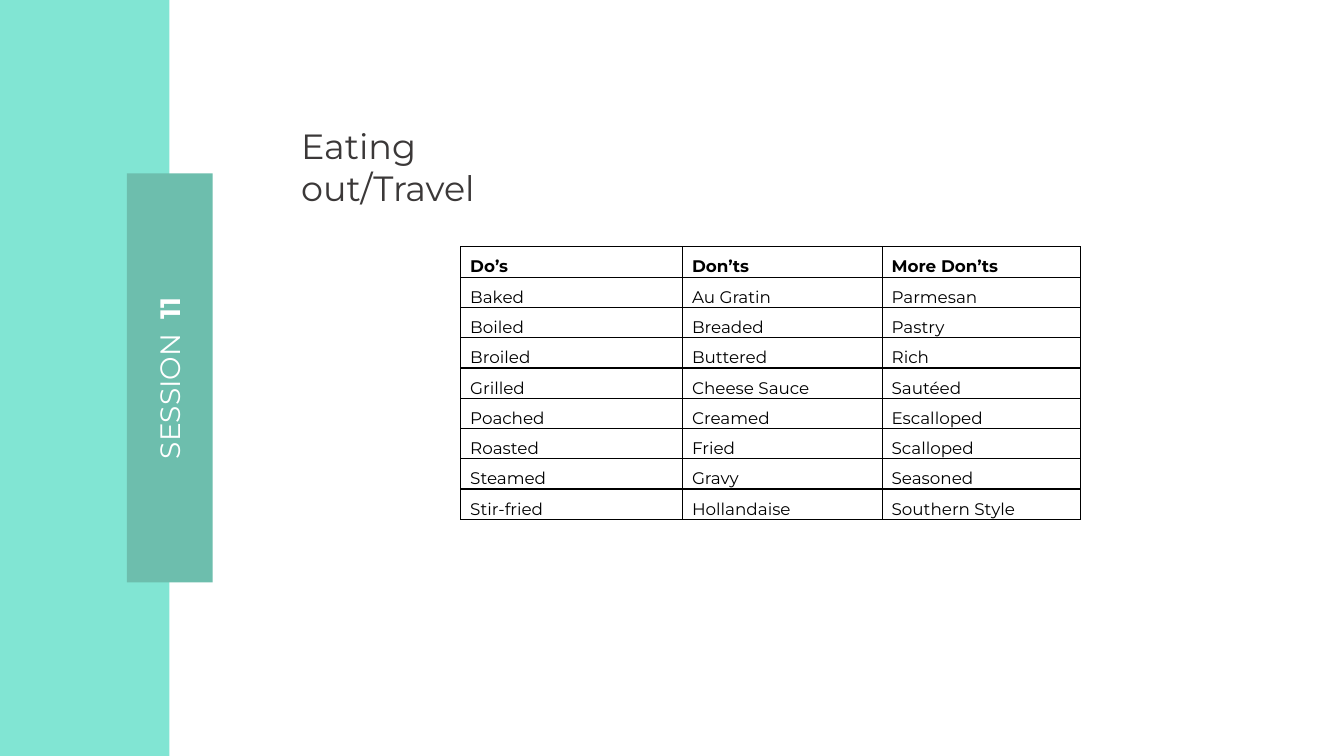
from lxml.etree import SubElement
from pptx import Presentation
from pptx.dml.color import RGBColor
from pptx.enum.shapes import MSO_SHAPE
from pptx.enum.text import MSO_ANCHOR, MSO_AUTO_SIZE, PP_ALIGN
from pptx.oxml.ns import qn
from pptx.util import Cm, Pt

MINT = RGBColor(0x81, 0xE5, 0xD3)
TEAL = RGBColor(0x6D, 0xBE, 0xAD)
WHITE = RGBColor(0xFF, 0xFF, 0xFF)
CHARCOAL = RGBColor(0x3B, 0x38, 0x38)
BLACK = RGBColor(0, 0, 0)
FONT = "Montserrat"

FOOD_CHOICES = [
    ("Do’s", "Don’ts", "More Don’ts"),
    ("Baked", "Au Gratin", "Parmesan"),
    ("Boiled", "Breaded", "Pastry"),
    ("Broiled", "Buttered", "Rich"),
    ("Grilled", "Cheese Sauce", "Sautéed"),
    ("Poached", "Creamed", "Escalloped"),
    ("Roasted", "Fried", "Scalloped"),
    ("Steamed", "Gravy", "Seasoned"),
    ("Stir-fried", "Hollandaise", "Southern Style"),
]
COLUMN_WIDTHS = (5.59, 5.03, 5)
ROW_HEIGHT = 0.73


def add_text(paragraph, text, size=12, color=BLACK, bold=False, spacing=0):
    """Append a run with its format; spacing is in points."""
    run = paragraph.add_run()
    run.text = text
    run.font.name = FONT
    run.font.size = Pt(size)
    run.font.bold = bold
    run.font.color.rgb = color
    if spacing:
        run.font._element.set("spc", str(round(spacing * 100)))


def add_panel(slide, left, top, width, height, color):
    """Draw a plain filled rectangle, with lengths in centimetres."""
    panel = slide.shapes.add_shape(
        MSO_SHAPE.RECTANGLE, Cm(left), Cm(top), Cm(width), Cm(height))
    panel.shadow.inherit = False
    panel.fill.solid()
    panel.fill.fore_color.rgb = color
    panel.line.fill.background()


def add_label(slide, left, top, width, height, wrap=True, rotation=0):
    """Add a growing text box and return its first paragraph."""
    label = slide.shapes.add_textbox(Cm(left), Cm(top), Cm(width), Cm(height))
    label.rotation = rotation
    label.text_frame.word_wrap = wrap
    label.text_frame.auto_size = MSO_AUTO_SIZE.SHAPE_TO_FIT_TEXT
    return label.text_frame.paragraphs[0]


def set_borders(cell, color=BLACK, width=1):
    """Outline all four sides of a table cell."""
    properties = cell._tc.get_or_add_tcPr()
    for side in ("a:lnL", "a:lnR", "a:lnT", "a:lnB"):
        border = SubElement(properties, qn(side), w=str(Pt(width)))
        fill = SubElement(border, qn("a:solidFill"))
        SubElement(fill, qn("a:srgbClr"), val=str(color))


def fill_cell(cell, text, bold):
    """Write one table cell with its borders, indent and line height."""
    set_borders(cell)
    cell.fill.background()
    cell.vertical_anchor = MSO_ANCHOR.MIDDLE
    cell.margin_left = cell.margin_right = Cm(0)
    cell.margin_top = cell.margin_bottom = Cm(0)
    paragraph = cell.text_frame.paragraphs[0]
    paragraph.line_spacing = Pt(21.6)
    paragraph._p.get_or_add_pPr().set("marL", str(Cm(0.24)))
    add_text(paragraph, text, bold=bold)


def add_food_table(slide, left, top):
    """Build the table of cooking styles to choose and to avoid."""
    table = slide.shapes.add_table(
        len(FOOD_CHOICES), len(COLUMN_WIDTHS), Cm(left), Cm(top),
        Cm(sum(COLUMN_WIDTHS)), Cm(ROW_HEIGHT * len(FOOD_CHOICES))).table
    table.horz_banding = False
    for column, width in zip(table.columns, COLUMN_WIDTHS):
        column.width = Cm(width)
    for row_index, choices in enumerate(FOOD_CHOICES):
        table.rows[row_index].height = Cm(ROW_HEIGHT)
        for column_index, choice in enumerate(choices):
            fill_cell(table.cell(row_index, column_index), choice,
                      bold=row_index == 0)


def main():
    """Build and save the slide."""
    deck = Presentation()
    deck.slide_width, deck.slide_height = Cm(33.87), Cm(19.05)
    slide = deck.slides.add_slide(deck.slide_layouts[6])

    add_panel(slide, 0, 0, 4.27, 19.05, MINT)
    add_panel(slide, 3.2, 4.37, 2.16, 10.31, TEAL)

    session = add_label(slide, 1.96, 8.97, 4.62, 1.12, wrap=False, rotation=270)
    session.alignment = PP_ALIGN.CENTER
    add_text(session, "SESSION", size=20, color=WHITE)
    add_text(session, " ", size=20, color=WHITE, spacing=5.2)
    add_text(session, "11", size=20, color=WHITE, bold=True)

    title = add_label(slide, 7.34, 3.02, 7.39, 1.32)
    add_text(title, "Eating out/Travel", size=25, color=CHARCOAL)

    add_food_table(slide, 11.61, 6.22)
    deck.save("out.pptx")


if __name__ == "__main__":
    main()
